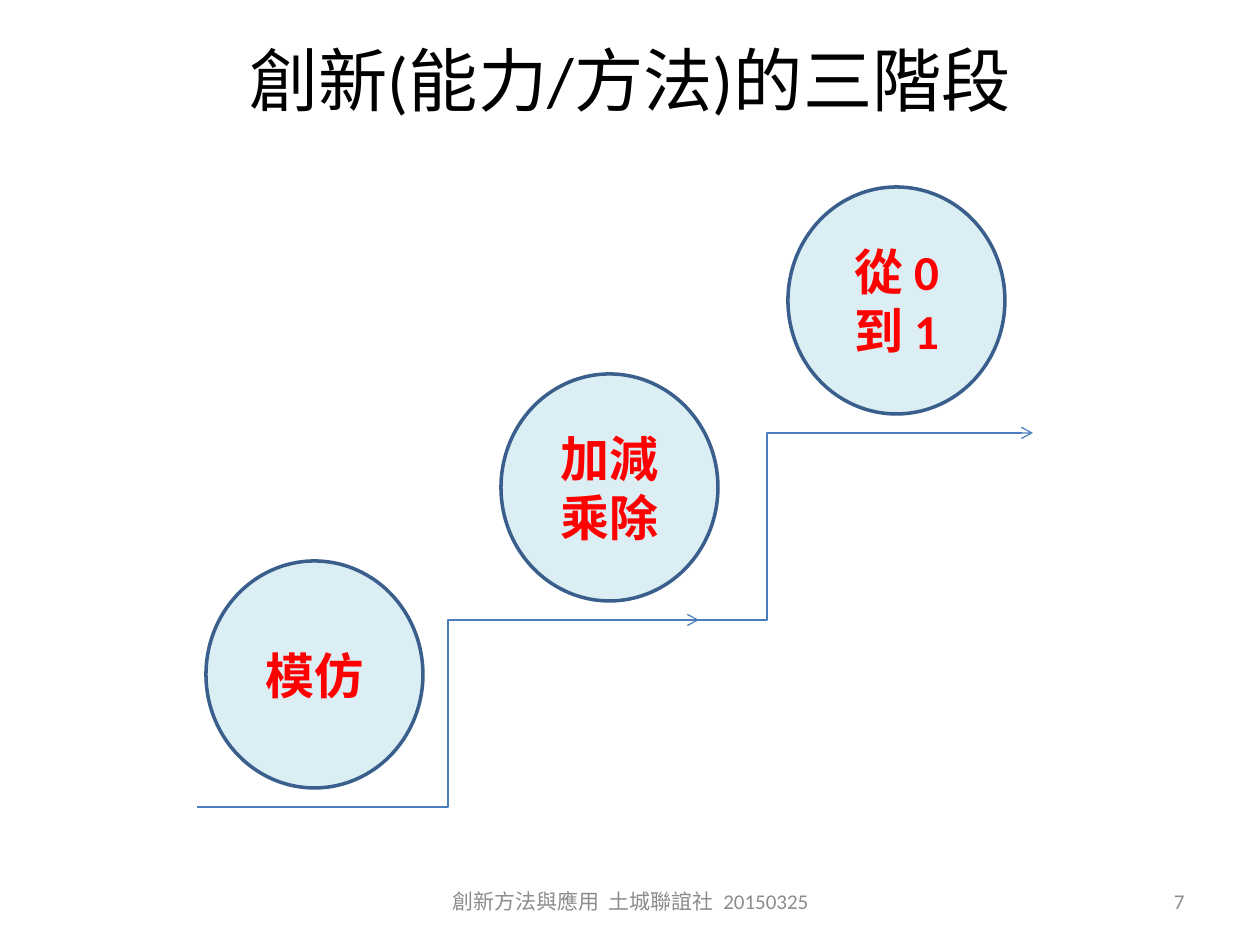
from pptx import Presentation
from pptx.dml.color import RGBColor
from pptx.enum.shapes import MSO_CONNECTOR as Link, MSO_SHAPE as Shape
from pptx.enum.text import MSO_ANCHOR as Anchor, PP_ALIGN as Align
from pptx.oxml.ns import qn
from pptx.util import Pt
from lxml.etree import SubElement

SCALE = 914400 / 126
BLACK = RGBColor(0, 0, 0)
RED = RGBColor(255, 0, 0)
GRAY = RGBColor(0x8C, 0x8C, 0x8C)
PALE = RGBColor(0xDB, 0xEE, 0xF4)
NAVY = RGBColor(0x3A, 0x5F, 0x8C)
BLUE = RGBColor(0x4B, 0x7E, 0xBC)

RISE = 187
BASE = 807
STAGES = [(206, "模仿"), (501, "加減乘除"), (788, "從 0 到 1")]
STEPS = [(197, 699), (501, 1033)]


def px(*nums):
    return [round(num * SCALE) for num in nums]


def write(shape, text, size, color, align=Align.CENTER, bold=False):
    frame = shape.text_frame
    frame.text = text
    frame.word_wrap = True
    frame.vertical_anchor = Anchor.MIDDLE
    line = frame.paragraphs[0]
    line.alignment = align
    font = line.runs[0].font
    font.name, font.size, font.bold = "Calibri", Pt(size), bold
    font.color.rgb = color


def add_title(slide, text):
    title = slide.shapes.title
    title.left, title.top, title.width, title.height = px(63, 38, 1134, 81)
    write(title, text, 39.6, BLACK)


def add_stage(slide, left, top, text):
    oval = slide.shapes.add_shape(Shape.OVAL, *px(left, top, 217, 227))
    oval.shadow.inherit = False
    oval.fill.solid()
    oval.fill.fore_color.rgb = PALE
    oval.line.color.rgb = NAVY
    oval.line.width = Pt(2)
    write(oval, text, 28, RED, bold=True)


def add_step(slide, left, low, right, high):
    step = slide.shapes.add_connector(Link.ELBOW, *px(left, low, right, high))
    step.line.color.rgb = BLUE
    step.line.width = Pt(0.75)
    SubElement(step.line._get_or_add_ln(), qn("a:tailEnd"), type="arrow")
    SubElement(step._element.spPr, qn("a:effectLst"))


def add_note(slide, left, width, text, align):
    box = slide.shapes.add_textbox(*px(left, 876, width, 50))
    write(box, text, 12, GRAY, align)


def main():
    deck = Presentation()
    deck.slide_width, deck.slide_height = px(1260, 945)
    slide = deck.slides.add_slide(deck.slide_layouts[5])
    add_title(slide, "創新(能力/方法)的三階段")
    for rank, (left, right) in enumerate(STEPS):
        low = BASE - rank * RISE
        add_step(slide, left, low, right, low - RISE)
    for rank, (left, text) in enumerate(STAGES):
        add_stage(slide, left, 561 - rank * RISE, text)
    add_note(slide, 431, 399, "創新方法與應用  土城聯誼社  20150325", Align.CENTER)
    add_note(slide, 903, 294, "7", Align.RIGHT)
    deck.save("out.pptx")


if __name__ == "__main__":
    main()
